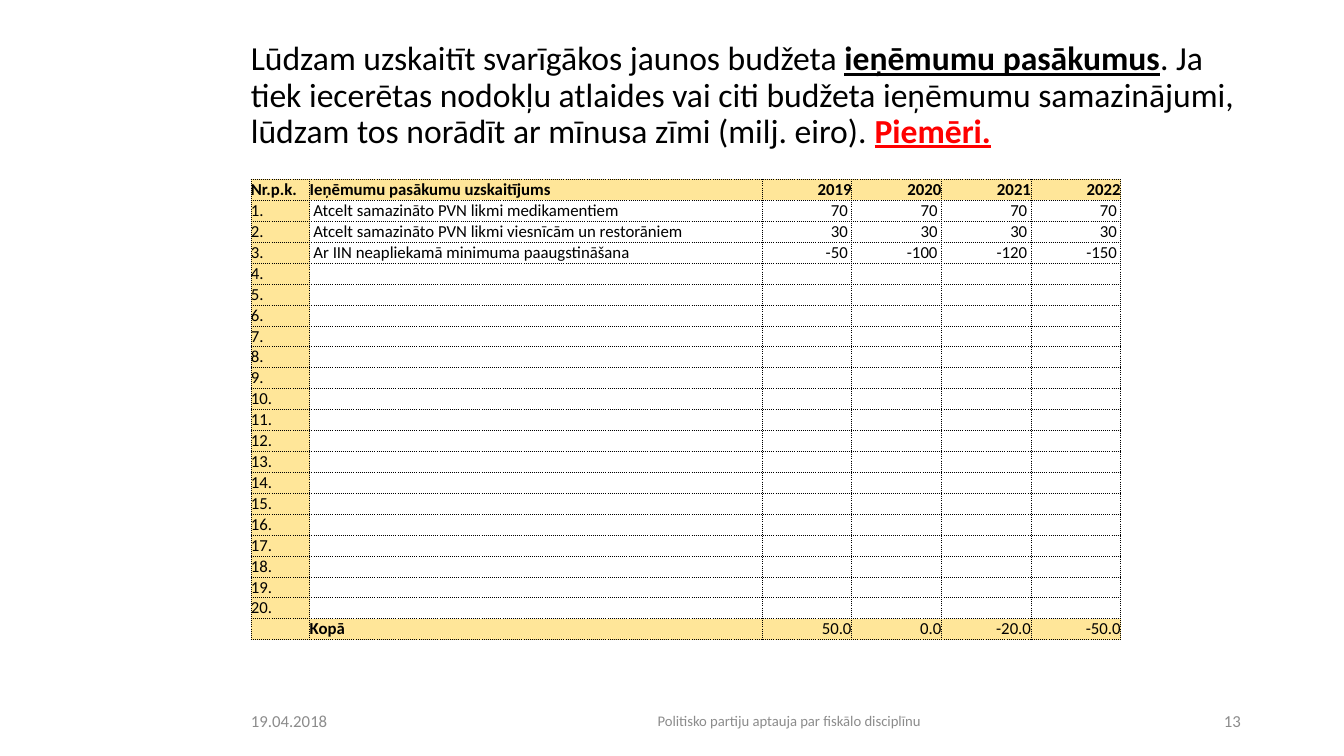
from lxml.etree import SubElement
from pptx import Presentation
from pptx.dml.color import RGBColor
from pptx.enum.text import MSO_ANCHOR, PP_ALIGN
from pptx.oxml import parse_xml
from pptx.oxml.ns import nsdecls
from pptx.util import Pt

LEFT, CENTER, RIGHT = PP_ALIGN.LEFT, PP_ALIGN.CENTER, PP_ALIGN.RIGHT
GOLD, BLACK, GREY, RED = "FFE699", "000000", "8C8C8C", "FF0000"


def style(p, size, color, align=LEFT, bold=False):
    p.alignment = align
    p.font.name = "Calibri"
    p.font.size = Pt(size)
    p.font.bold = bold
    p.font.color.rgb = RGBColor.from_string(color)


def add_box(left, top, width, height):
    """Add a wrapping, vertically centred text box and return its first paragraph."""
    tf = s.shapes.add_textbox(Pt(left), Pt(top), Pt(width), Pt(height)).text_frame
    tf.word_wrap = True
    tf.vertical_anchor = MSO_ANCHOR.MIDDLE
    return tf.paragraphs[0]


prs = Presentation()
prs.slide_width, prs.slide_height = Pt(960), Pt(540)
s = prs.slides.add_slide(prs.slide_layouts[6])

# Title
p = add_box(172.1, 28.8, 721.4, 79.9)
p.line_spacing = 0.9
style(p, 24, BLACK)
for text, emphasis, color in [
    ("Lūdzam uzskaitīt svarīgākos jaunos budžeta ", False, BLACK),
    ("ieņēmumu pasākumus", True, BLACK),
    (". Ja tiek iecerētas nodokļu atlaides vai citi budžeta ieņēmumu samazinājumi, "
     "lūdzam tos norādīt ar mīnusa zīmi (milj. eiro). ", False, BLACK),
    ("Piemēri.", True, RED),
]:
    r = p.add_run()
    r.text = text
    r.font.bold = r.font.underline = emphasis
    r.font.color.rgb = RGBColor.from_string(color)

# Revenue table: header, 20 numbered measures, total
measures = [
    ("Atcelt samazināto PVN likmi medikamentiem", 70, 70, 70, 70),
    ("Atcelt samazināto PVN likmi viesnīcām un restorāniem", 30, 30, 30, 30),
    ("Ar IIN neapliekamā minimuma paaugstināšana", -50, -100, -120, -150),
]
measures += [("",) * 5] * (20 - len(measures))
rows = [("Nr.p.k.", "Ieņēmumu pasākumu uzskaitījums", 2019, 2020, 2021, 2022)]
rows += [(f"{n}.", *measure) for n, measure in enumerate(measures, 1)]
rows += [("", "Kopā", "50.0", "0.0", "-20.0", "-50.0")]
last = len(rows) - 1
widths = [42, 323] + [64.1] * 4
row_height = 14.95

table = s.shapes.add_table(len(rows), len(widths), Pt(179.2), Pt(128.2),
                           Pt(sum(widths)), Pt(row_height * len(rows))).table
table.first_row = table.horz_banding = False
for column, width in zip(table.columns, widths):
    column.width = Pt(width)

for i, values in enumerate(rows):
    table.rows[i].height = Pt(row_height)
    for j, value in enumerate(values):
        cell = table.cell(i, j)
        shaded = i in (0, last) or j == 0
        cell.margin_top = cell.margin_bottom = 0
        cell.margin_left = cell.margin_right = Pt(0 if shaded else 2.7)
        cell.vertical_anchor = MSO_ANCHOR.BOTTOM if i == 0 else MSO_ANCHOR.MIDDLE
        p = cell.text_frame.paragraphs[0]
        if value != "":
            p.add_run().text = str(value)
        style(p, 12, BLACK, RIGHT if j > 1 else LEFT, i == 0 or (i, j) == (last, 1))
        p._p.get_or_add_endParaRPr().set("sz", "1200")  # keeps empty rows low

        tcPr = cell._tc.get_or_add_tcPr()
        for side in ("lnL", "lnR", "lnT", "lnB"):
            ln = parse_xml(f'<a:{side} {nsdecls("a")} w="6350"><a:solidFill>'
                           f'<a:srgbClr val="{BLACK}"/></a:solidFill></a:{side}>')
            SubElement(ln, ln.tag.replace(side, "prstDash"), val="sysDot")
            tcPr.append(ln)
        if shaded:
            cell.fill.solid()
            cell.fill.fore_color.rgb = RGBColor.from_string(GOLD)
        else:
            cell.fill.background()

# Footer
for text, left, width, size, align in [
    ("19.04.2018", 172.1, 118.1, 12, LEFT),
    ("Politisko partiju aptauja par fiskālo disciplīnu", 310.3, 506.9, 10.5, CENTER),
    ("13", 836.6, 56.9, 12, RIGHT),
]:
    p = add_box(left, 500.4, width, 28.8)
    p.add_run().text = text
    style(p, size, GREY, align)

prs.save("out.pptx")
